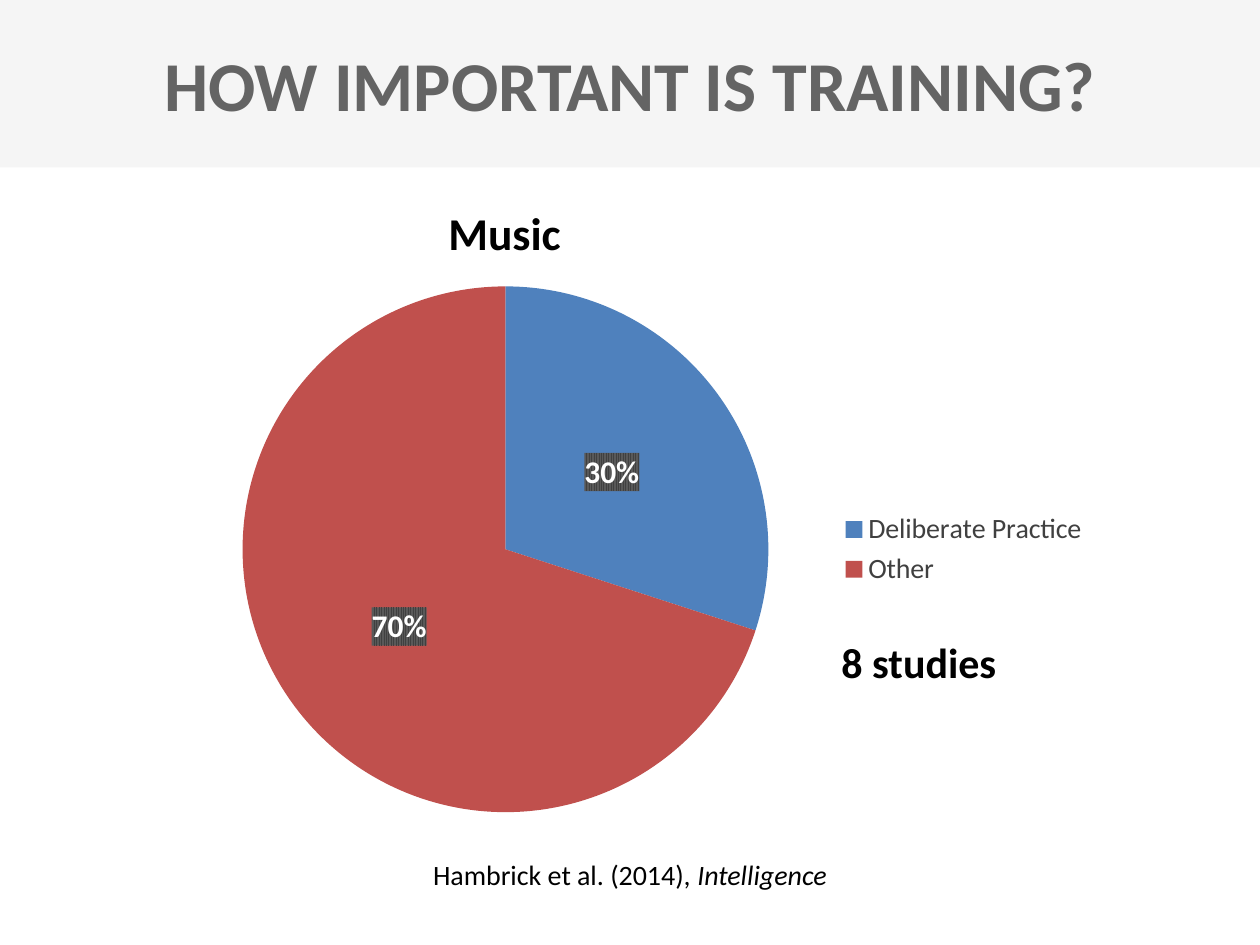
from dataclasses import dataclass

from lxml import etree
from pptx import Presentation
from pptx.chart.data import CategoryChartData
from pptx.dml.color import RGBColor
from pptx.enum.chart import XL_CHART_TYPE, XL_LABEL_POSITION, XL_LEGEND_POSITION
from pptx.enum.shapes import MSO_SHAPE
from pptx.enum.text import MSO_ANCHOR, PP_ALIGN
from pptx.oxml import parse_xml
from pptx.oxml.ns import nsdecls, qn
from pptx.util import Inches, Pt

PIE = XL_CHART_TYPE.PIE
CENTER_LABEL = XL_LABEL_POSITION.CENTER
RIGHT_LEGEND = XL_LEGEND_POSITION.RIGHT
RECTANGLE = MSO_SHAPE.RECTANGLE
TOP, MIDDLE = MSO_ANCHOR.TOP, MSO_ANCHOR.MIDDLE
LEFT, CENTER = PP_ALIGN.LEFT, PP_ALIGN.CENTER

FONT = "Calibri"
COLORS = {
    "band": "F5F5F5",
    "title": "646464",
    "text": "000000",
    "legend": "404040",
    "label": "FFFFFF",
    "label_dark": "404040",
    "label_light": "595959",
    "practice": "4F81BD",
    "other": "C0504D",
}
SHARES = {"Deliberate Practice": (30, "practice"), "Other": (70, "other")}
PLOT_LAYOUT = {"x": 0.07, "y": 0.03, "w": 0.57, "h": 0.94}


@dataclass
class Run:
    text: str
    italic: bool = False


@dataclass
class TextBox:
    box: tuple[float, float, float, float]
    runs: list[Run]
    size: int
    bold: bool = False
    color: str = "text"
    align: PP_ALIGN = CENTER
    anchor: MSO_ANCHOR = TOP


TEXT_BOXES = [
    TextBox((0, 0.44, 10, 0.45), [Run("HOW IMPORTANT IS TRAINING?")], 40, True, "title", anchor=MIDDLE),
    TextBox((0, 6.76, 10, 0.37), [Run("Hambrick et al. (2014), "), Run("Intelligence", True)], 16),
    TextBox((1.88, 1.58, 4.25, 0.54), [Run("Music")], 26, True),
    TextBox((6.58, 5, 2.45, 0.5), [Run("8 studies")], 24, True, align=LEFT),
]


def rgb(name: str) -> RGBColor:
    return RGBColor.from_string(COLORS[name])


def set_font(font, size: int, color: str, **flags: bool) -> None:
    for name, value in {"name": FONT, "size": Pt(size), **flags}.items():
        setattr(font, name, value)
    font.color.rgb = rgb(color)


def add_band(slide) -> None:
    band = slide.shapes.add_shape(RECTANGLE, Inches(0), Inches(0), Inches(10), Inches(1.33))
    band.shadow.inherit = False
    band.fill.solid()
    band.fill.fore_color.rgb = rgb("band")
    band.line.fill.background()


def add_text(slide, item: TextBox) -> None:
    frame = slide.shapes.add_textbox(*map(Inches, item.box)).text_frame
    frame.word_wrap = True
    frame.vertical_anchor = item.anchor
    paragraph = frame.paragraphs[0]
    paragraph.alignment = item.align
    for part in item.runs:
        run = paragraph.add_run()
        run.text = part.text
        set_font(run.font, item.size, item.color, bold=item.bold, italic=part.italic)


def set_plot_layout(chart) -> None:
    plot_area = chart.plots[0]._element.getparent()
    for old in plot_area.findall(qn("c:layout")):
        plot_area.remove(old)
    layout = parse_xml(f"<c:layout {nsdecls('c')}><c:manualLayout/></c:layout>")
    settings = {"layoutTarget": "inner", "xMode": "edge", "yMode": "edge", **PLOT_LAYOUT}
    for tag, value in settings.items():
        etree.SubElement(layout[0], qn(f"c:{tag}")).set("val", str(value))
    plot_area.insert(0, layout)


def format_labels(plot) -> None:
    plot.has_data_labels = True
    labels = plot.series[0].data_labels
    settings = {
        "show_percentage": True,
        "show_value": False,
        "number_format": "0%",
        "number_format_is_linked": False,
        "position": CENTER_LABEL,
    }
    for name, value in settings.items():
        setattr(labels, name, value)
    set_font(labels.font, 18, "label", bold=True)
    pattern = parse_xml(
        f'<c:spPr {nsdecls("c", "a")}><a:pattFill prst="narVert">'
        f'<a:fgClr><a:srgbClr val="{COLORS["label_dark"]}"/></a:fgClr>'
        f'<a:bgClr><a:srgbClr val="{COLORS["label_light"]}"/></a:bgClr>'
        "</a:pattFill></c:spPr>"
    )
    labels._element.find(qn("c:txPr")).addprevious(pattern)


def add_pie(slide) -> None:
    data = CategoryChartData()
    data.categories = list(SHARES)
    data.add_series("Series 1", [share for share, _ in SHARES.values()])
    box = map(Inches, (1.41, 2.14, 7.33, 4.44))
    chart = slide.shapes.add_chart(PIE, *box, data).chart
    set_font(chart.font, 10, "text")
    chart.has_title = False
    chart.has_legend = True
    chart.legend.position = RIGHT_LEGEND
    chart.legend.include_in_layout = False
    set_font(chart.legend.font, 16, "legend")
    plot = chart.plots[0]
    plot.vary_by_categories = True
    for index, (_, color) in enumerate(SHARES.values()):
        point_format = plot.series[0].points[index].format
        point_format.fill.solid()
        point_format.fill.fore_color.rgb = rgb(color)
        point_format.line.fill.background()
    format_labels(plot)
    set_plot_layout(chart)


def main() -> None:
    """Build the slide on the importance of training in music."""
    presentation = Presentation()
    presentation.slide_width = Inches(10)
    presentation.slide_height = Inches(7.5)
    slide = presentation.slides.add_slide(presentation.slide_layouts[6])
    add_band(slide)
    add_pie(slide)
    for item in TEXT_BOXES:
        add_text(slide, item)
    presentation.save("out.pptx")


if __name__ == "__main__":
    main()
